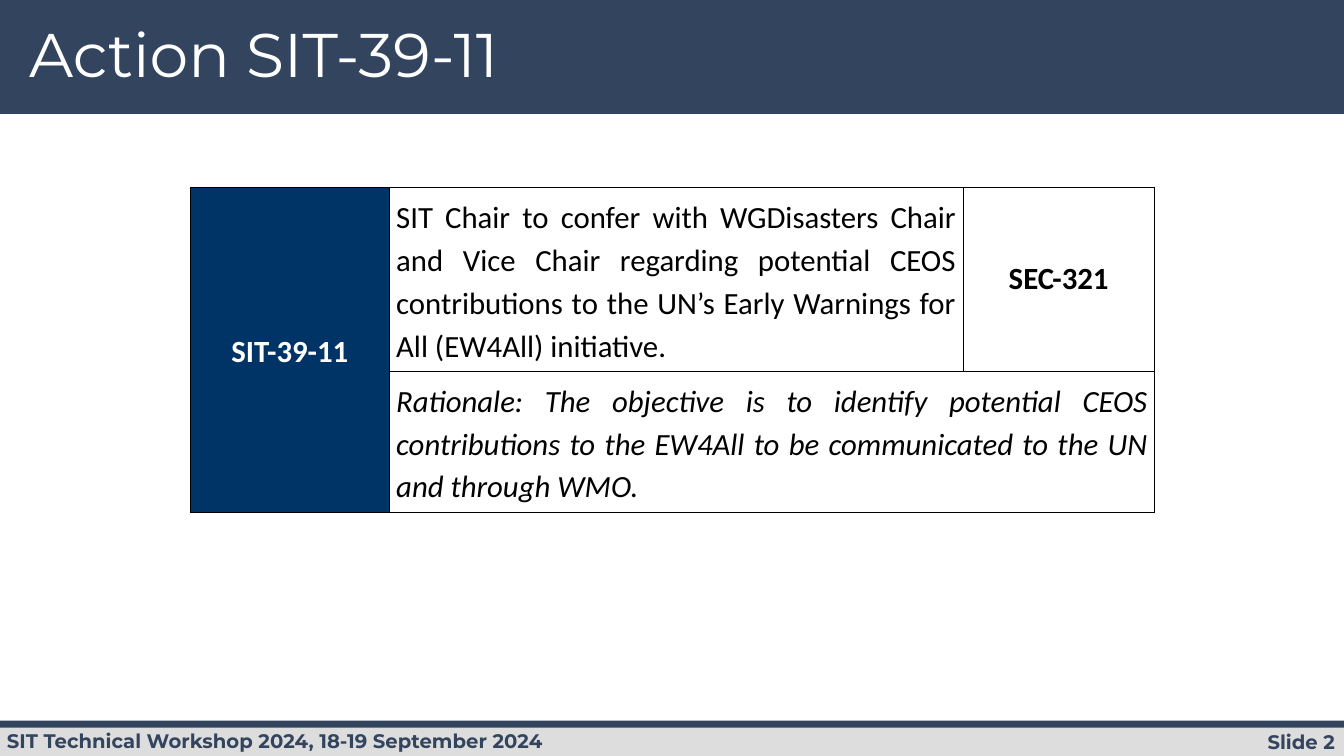
from dataclasses import dataclass

import pptx
import pptx.dml.color
import pptx.enum.shapes
import pptx.enum.text
import pptx.oxml
import pptx.oxml.ns
import pptx.util

Inches = pptx.util.Inches
Pt = pptx.util.Pt
RGB = pptx.dml.color.RGBColor.from_string
ALIGN = pptx.enum.text.PP_ALIGN
ANCHOR = pptx.enum.text.MSO_ANCHOR


@dataclass(frozen=True)
class Theme:
    navy: str = "33445F"
    label: str = "003366"
    footer: str = "DDDDDD"
    white: str = "FFFFFF"
    black: str = "000000"
    heading_font: str = "Montserrat"
    table_font: str = "Calibri"
    title_size: int = 44
    table_size: int = 22
    footer_size: int = 14
    border: float = 0.5


THEME = Theme()


def apply(target, values):
    for name, value in values.items():
        setattr(target, name, value)


def write(tf, text, color, font, paragraph):
    p = tf.paragraphs[0]
    apply(p, paragraph)
    r = p.add_run()
    r.text = text
    apply(r.font, font)
    r.font.color.rgb = RGB(color)


def add_band(s, top, height, color):
    sp = s.shapes.add_shape(pptx.enum.shapes.MSO_SHAPE.RECTANGLE, 0, Inches(top), Inches(13.33), Inches(height))
    sp.shadow.inherit = False
    sp.fill.solid()
    sp.fill.fore_color.rgb = RGB(color)
    sp.line.fill.background()


def add_text(s, box, text, color, font, paragraph):
    tf = s.shapes.add_textbox(*map(Inches, box)).text_frame
    tf.word_wrap = True
    write(tf, text, color, {"name": THEME.heading_font, **font}, paragraph)


def add_borders(cell):
    tc_pr = cell._tc.get_or_add_tcPr()
    for side in "LRTB":
        tc_pr.append(pptx.oxml.parse_xml(
            f'<a:ln{side} {pptx.oxml.ns.nsdecls("a")} w="{Pt(THEME.border)}">'
            f'<a:solidFill><a:srgbClr val="{THEME.black}"/></a:solidFill></a:ln{side}>'))


def fill_cell(cell, text, fill, color, font, paragraph):
    cell.fill.solid()
    cell.fill.fore_color.rgb = RGB(fill)
    write(cell.text_frame, text, color,
          {"name": THEME.table_font, "size": Pt(THEME.table_size), **font}, paragraph)


def add_action_table(s, left, top, widths, heights):
    table = s.shapes.add_table(len(heights), len(widths), Inches(left), Inches(top),
                               Inches(sum(widths)), Inches(sum(heights))).table
    apply(table, {"first_row": False, "horz_banding": False})
    for column, width in zip(table.columns, widths):
        column.width = Inches(width)
    for row, height in zip(table.rows, heights):
        row.height = Inches(height)
    margins = dict.fromkeys(("margin_left", "margin_right", "margin_top", "margin_bottom"), Inches(0.07))
    for cell in table.iter_cells():
        apply(cell, {"vertical_anchor": ANCHOR.MIDDLE, **margins})
        add_borders(cell)
        cell.fill.background()
    table.cell(0, 0).merge(table.cell(1, 0))
    table.cell(1, 1).merge(table.cell(1, 2))
    return table


def main():
    prs = pptx.Presentation()
    apply(prs, {"slide_width": Inches(13.33), "slide_height": Inches(7.5)})
    s = prs.slides.add_slide(prs.slide_layouts[6])

    add_band(s, 0, 1.13, THEME.navy)
    add_band(s, 7.19, 0.31, THEME.footer)
    add_band(s, 7.15, 0.07, THEME.navy)

    footer = {"size": Pt(THEME.footer_size), "bold": True}
    add_text(s, (11.23, 7.19, 2.11, 0.34), "Slide 2", THEME.navy, footer, {"alignment": ALIGN.RIGHT})
    add_text(s, (-0.03, 7.18, 6.43, 0.34), "SIT Technical Workshop 2024, 18-19 September 2024",
             THEME.navy, footer, {"alignment": ALIGN.LEFT})
    add_text(s, (0.19, 0.19, 10.27, 0.85), "Action SIT-39-11", THEME.white,
             {"size": Pt(THEME.title_size)}, {"line_spacing": 0.9})

    table = add_action_table(s, 1.89, 1.86, (1.97, 5.69, 1.9), (1.82, 1.4))
    centered = {"alignment": ALIGN.CENTER, "line_spacing": 1.14}
    justified = {"alignment": ALIGN.JUSTIFY, "line_spacing": 1.14}
    fill_cell(table.cell(0, 0), "SIT-39-11", THEME.label, THEME.white, {"bold": True}, centered)
    fill_cell(table.cell(0, 1),
              "SIT Chair to confer with WGDisasters Chair and Vice Chair regarding potential CEOS "
              "contributions to the UN’s Early Warnings for All (EW4All) initiative.",
              THEME.white, THEME.black, {"bold": False}, justified)
    fill_cell(table.cell(0, 2), "SEC-321", THEME.white, THEME.black, {"bold": True},
              {"alignment": ALIGN.CENTER})
    fill_cell(table.cell(1, 1),
              "Rationale: The objective is to identify potential CEOS contributions to the EW4All "
              "to be communicated to the UN and through WMO.",
              THEME.white, THEME.black, {"italic": True}, justified)
    prs.save("out.pptx")


if __name__ == "__main__":
    main()
